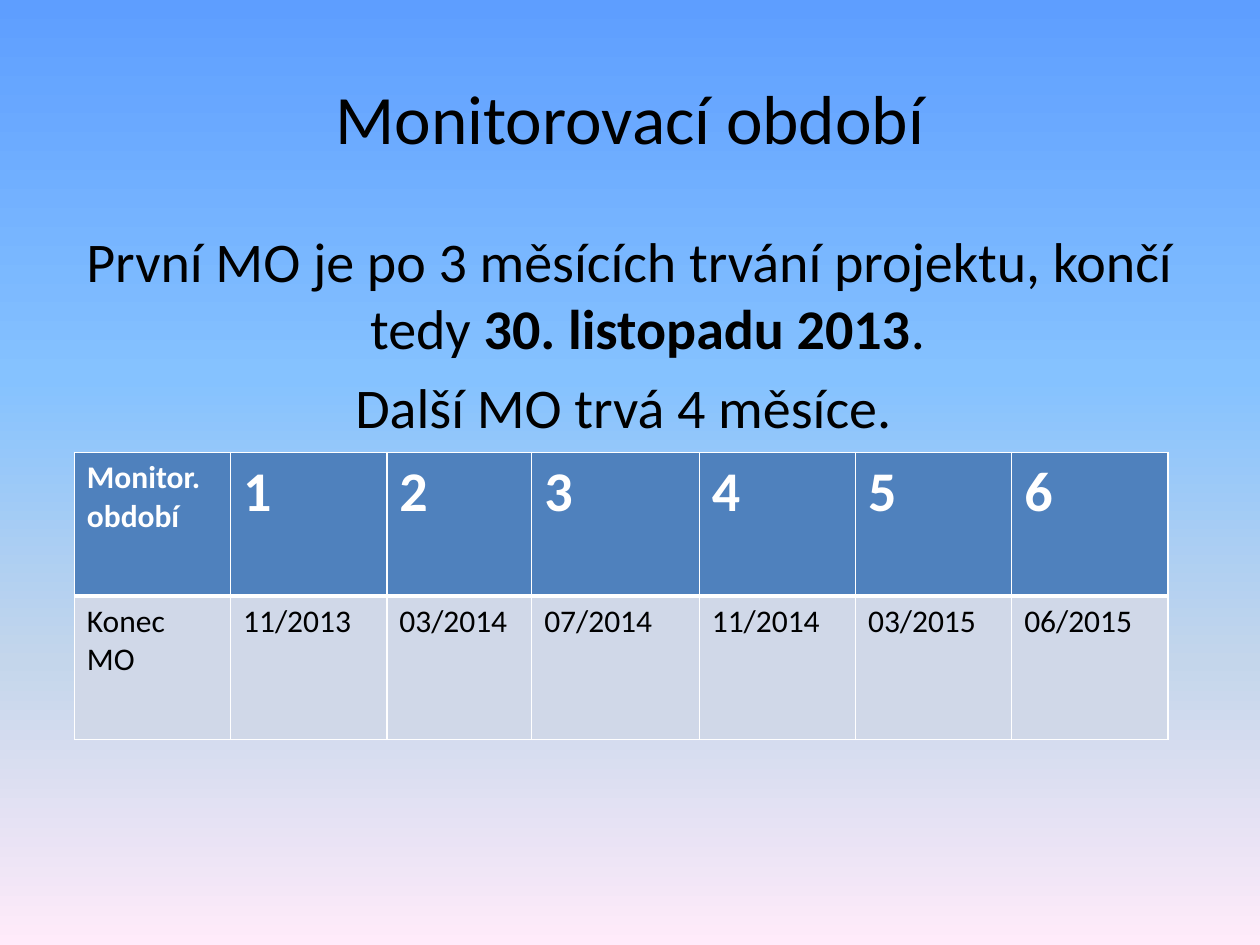
from lxml import etree
from pptx import Presentation
from pptx import util as u
from pptx.dml.color import RGBColor
from pptx.enum import text
from pptx.oxml.ns import qn

FONT = "Calibri"
COLORS = {"text": "000000", "header_text": "FFFFFF", "border": "FFFFFF",
          "header": "4F81BD", "row": "D0D8E8"}
SKY = [(0, "5E9EFF"), (40, "85C2FF"), (70, "C4D6EB"), (100, "FFEBFA")]

INTRO = [
    [("První MO je po 3 měsících trvání projektu, končí tedy ", False),
     ("30. listopadu 2013", True), (". ", False)],
    [("Další MO trvá 4 měsíce. ", False)],
]
PERIODS = ["Monitor. období", "1", "2", "3", "4", "5", "6"]
ENDS = ["Konec MO", "11/2013", "03/2014", "07/2014", "11/2014", "03/2015", "06/2015"]
COLUMN_WIDTHS = [1.24, 1.24, 1.15, 1.33, 1.24, 1.24, 1.24]
ROW_HEIGHT = 1.14


def set_font(font, size, color, bold=None):
    font.name = FONT
    font.size = u.Pt(size)
    font.color.rgb = RGBColor.from_string(COLORS[color])
    font.bold = bold


def paint_background(slide):
    fill = slide.background.fill
    fill.gradient()
    fill.gradient_angle = 270  # counter-clockwise, so top to bottom
    stops = next(slide.element.iter(qn("a:gsLst")))
    for stop in list(stops):
        stops.remove(stop)
    for percent, color in SKY:
        stop = etree.SubElement(stops, qn("a:gs"), pos=str(percent * 1000))
        etree.SubElement(stop, qn("a:srgbClr"), val=color)


def add_title(slide, wording):
    title = slide.shapes.title
    title.left, title.top = u.Inches(0.5), u.Inches(0.3)
    title.width, title.height = u.Inches(9), u.Inches(1.25)
    title.text_frame.text = wording
    title.text_frame.vertical_anchor = text.MSO_ANCHOR.MIDDLE
    para = title.text_frame.paragraphs[0]
    para.alignment = text.PP_ALIGN.CENTER
    set_font(para.font, 39.6, "text")


def add_intro(slide):
    box = slide.shapes.add_textbox(u.Inches(0.5), u.Inches(1.75), u.Inches(9), u.Inches(4.95))
    frame = box.text_frame
    frame.word_wrap = True
    for index, spans in enumerate(INTRO):
        para = frame.add_paragraph() if index else frame.paragraphs[0]
        para.alignment = text.PP_ALIGN.CENTER
        para.space_before = u.Pt(6.4)
        set_font(para.font, 32, "text")
        # Hanging indent
        properties = para._p.get_or_add_pPr()
        properties.set("marL", str(u.Inches(0.38)))
        properties.set("indent", str(u.Inches(-0.38)))
        for wording, bold in spans:
            span = para.add_run()
            span.text = wording
            span.font.bold = bold


def set_borders(cell, top, bottom):
    properties = cell._tc.get_or_add_tcPr()
    for side, width in (("L", 1), ("R", 1), ("T", top), ("B", bottom)):
        line = etree.SubElement(properties, qn(f"a:ln{side}"), w=str(u.Pt(width)))
        fill = etree.SubElement(line, qn("a:solidFill"))
        etree.SubElement(fill, qn("a:srgbClr"), val=COLORS["border"])


def fill_cell(cell, wording, size, color, fill, bold):
    cell.text = wording
    set_font(cell.text_frame.paragraphs[0].font, size, color, bold)
    cell.fill.solid()
    cell.fill.fore_color.rgb = RGBColor.from_string(COLORS[fill])


def add_periods_table(slide):
    frame = slide.shapes.add_table(
        2, len(PERIODS), u.Inches(0.59), u.Inches(3.59),
        u.Inches(sum(COLUMN_WIDTHS)), u.Inches(2 * ROW_HEIGHT))
    table = frame.table
    table.first_row = table.horz_banding = False
    for row in table.rows:
        row.height = u.Inches(ROW_HEIGHT)
    for index, width in enumerate(COLUMN_WIDTHS):
        table.columns[index].width = u.Inches(width)
        header, end = table.cell(0, index), table.cell(1, index)
        # A thick line parts the header from the dates
        set_borders(header, top=1, bottom=3)
        set_borders(end, top=3, bottom=1)
        fill_cell(header, PERIODS[index], 32 if index else 18, "header_text", "header", True)
        fill_cell(end, ENDS[index], 18, "text", "row", False)


def main():
    deck = Presentation()
    deck.slide_width, deck.slide_height = u.Inches(10), u.Inches(7.5)
    slide = deck.slides.add_slide(deck.slide_layouts[5])  # title only
    paint_background(slide)
    add_title(slide, "Monitorovací období")
    add_intro(slide)
    add_periods_table(slide)
    deck.save("out.pptx")


if __name__ == "__main__":
    main()
